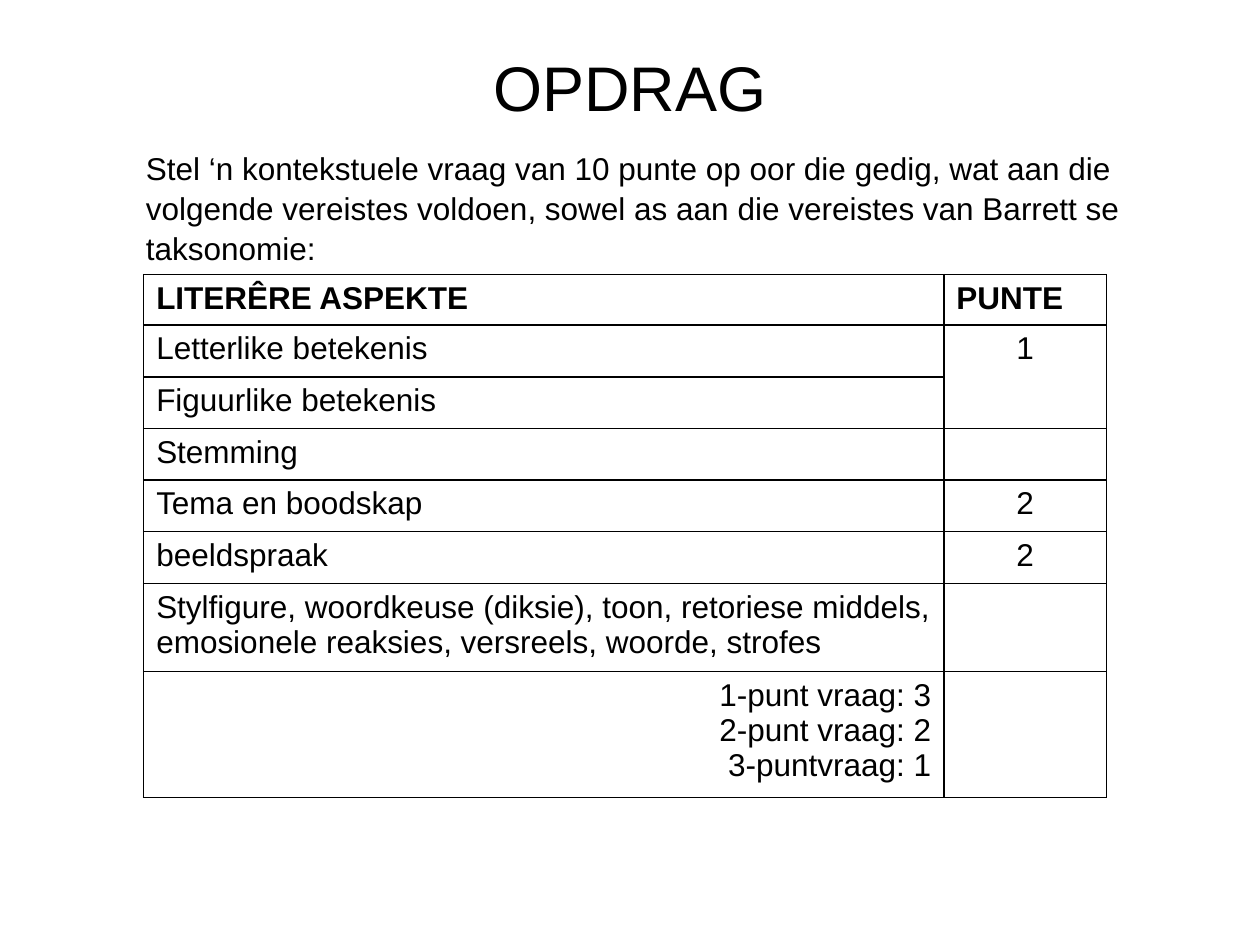
import dataclasses

import pptx
import pptx.dml.color
import pptx.enum.text
import pptx.oxml
import pptx.oxml.ns
import pptx.util

Inches = pptx.util.Inches
ALIGN = pptx.enum.text.PP_ALIGN
ANCHOR = pptx.enum.text.MSO_ANCHOR
COLORS = {"ink": "000000", "paper": "FFFFFF"}
FONT = "Arial"


@dataclasses.dataclass
class AspectRow:
    aspect: str
    points: str = ""
    height: float = 0.41
    bold: bool = False
    aspect_align: int = ALIGN.LEFT
    points_align: int = ALIGN.CENTER


ROWS = [
    AspectRow("LITERÊRE ASPEKTE", "PUNTE", 0.38, bold=True, points_align=ALIGN.LEFT),
    AspectRow("Letterlike betekenis", "1"),
    AspectRow("Figuurlike betekenis"),
    AspectRow("Stemming"),
    AspectRow("Tema en boodskap", "2"),
    AspectRow("beeldspraak", "2"),
    AspectRow("Stylfigure, woordkeuse (diksie), toon, retoriese middels, "
              "emosionele reaksies, versreels, woorde, strofes", height=0.66),
    AspectRow("1-punt vraag: 3\n2-punt vraag: 2\n3-puntvraag: 1", height=0.94,
              aspect_align=ALIGN.RIGHT),
]
COLUMN_WIDTHS = (6.35, 1.29)


def write_text(frame, text: str, *, size: float = 18, bold: bool = False,
               align: int = ALIGN.LEFT, spacing: float | None = None) -> None:
    """Write each line of text as one formatted paragraph."""
    frame.word_wrap = True
    for index, line in enumerate(text.split("\n")):
        para = frame.paragraphs[0] if index == 0 else frame.add_paragraph()
        para.alignment = align
        para.line_spacing = spacing
        para.font.size = pptx.util.Pt(size)
        if line:
            span = para.add_run()
            span.text = line
            span.font.name = FONT
            span.font.size = pptx.util.Pt(size)
            span.font.bold = bold
            span.font.color.rgb = pptx.dml.color.RGBColor.from_string(COLORS["ink"])


def add_text_box(page, left: float, top: float, width: float, height: float,
                 text: str, *, anchor: int = ANCHOR.TOP, **text_format) -> None:
    box = page.shapes.add_textbox(Inches(left), Inches(top), Inches(width), Inches(height))
    box.text_frame.vertical_anchor = anchor
    write_text(box.text_frame, text, **text_format)


def style_cell(cell) -> None:
    """Give a cell a clear fill and thin lines on all sides."""
    properties = cell._tc.get_or_add_tcPr()
    for side in ("lnL", "lnR", "lnT", "lnB"):
        properties.append(pptx.oxml.parse_xml(
            f'<a:{side} {pptx.oxml.ns.nsdecls("a")} w="{pptx.util.Pt(1)}"><a:solidFill>'
            f'<a:srgbClr val="{COLORS["ink"]}"/></a:solidFill></a:{side}>'))
    cell.fill.background()


def add_aspect_table(page, left: float, top: float, rows: list[AspectRow]) -> None:
    frame = page.shapes.add_table(
        len(rows), len(COLUMN_WIDTHS), Inches(left), Inches(top),
        Inches(sum(COLUMN_WIDTHS)), Inches(sum(row.height for row in rows)))
    table = frame.table
    table.first_row = table.horz_banding = False
    for column, width in zip(table.columns, COLUMN_WIDTHS):
        column.width = Inches(width)
    for index, row in enumerate(rows):
        table.rows[index].height = Inches(row.height)
        contents = ((row.aspect, row.aspect_align), (row.points, row.points_align))
        for cell, (text, align) in zip(table.rows[index].cells, contents):
            write_text(cell.text_frame, text, bold=row.bold, align=align)
            style_cell(cell)
    # The literal and figurative meanings share one mark
    table.cell(1, 1).merge(table.cell(2, 1))


def main() -> None:
    deck = pptx.Presentation()
    deck.slide_width, deck.slide_height = Inches(10), Inches(7.5)
    page = deck.slides.add_slide(deck.slide_layouts[6])
    page.background.fill.solid()
    page.background.fill.fore_color.rgb = pptx.dml.color.RGBColor.from_string(COLORS["paper"])

    # Title and instruction
    add_text_box(page, 0.5, 0.3, 9, 0.77, "OPDRAG", size=36,
                 align=ALIGN.CENTER, anchor=ANCHOR.MIDDLE)
    add_text_box(page, 1.06, 1.12, 8.19, 1.21,
                 "Stel ‘n kontekstuele vraag van 10 punte op oor die gedig, wat aan die "
                 "volgende vereistes voldoen, sowel as aan die vereistes van Barrett se "
                 "taksonomie:", spacing=1.05)

    # Marking table
    add_aspect_table(page, 1.14, 2.18, ROWS)
    deck.save("out.pptx")


if __name__ == "__main__":
    main()
